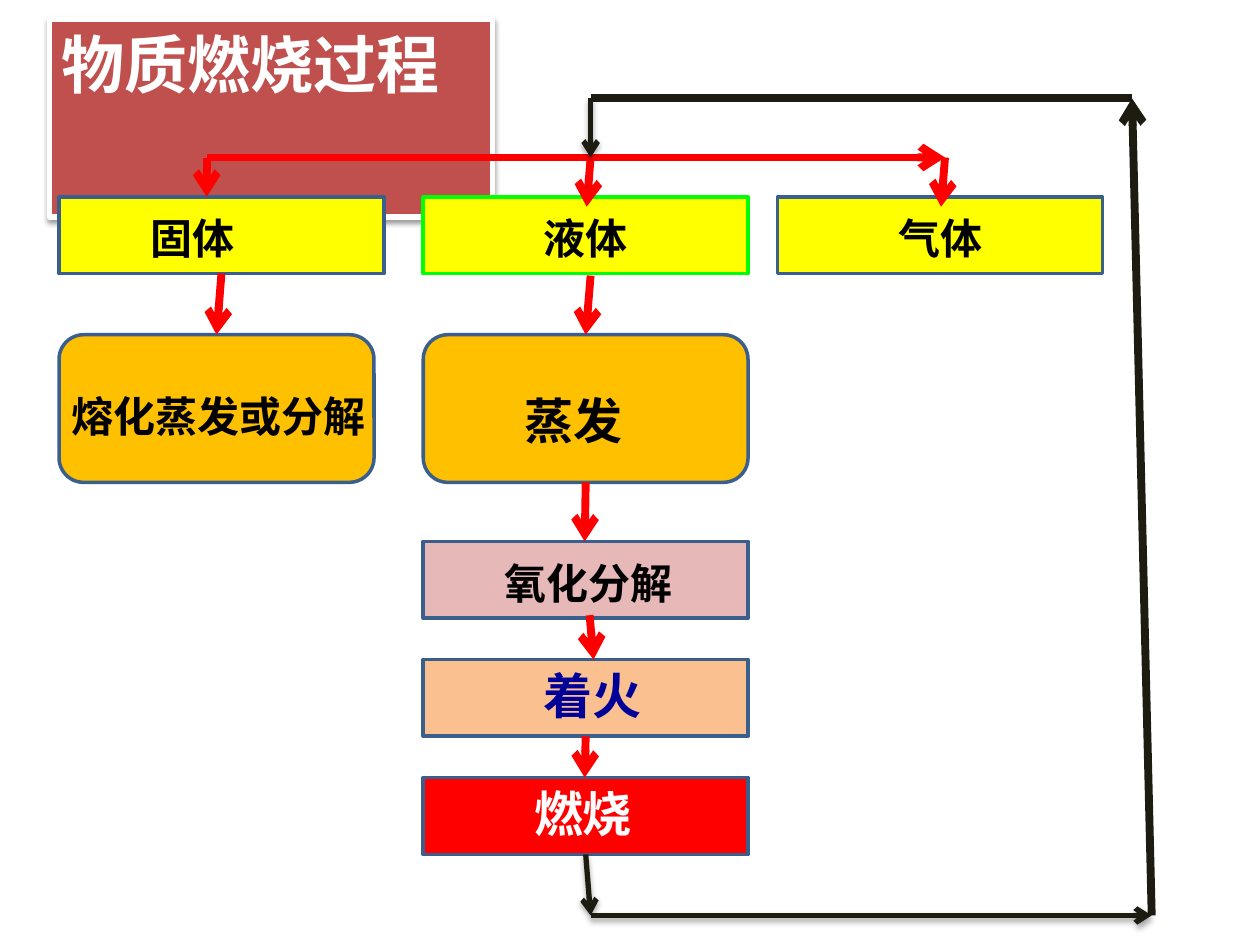
import pptx
import pptx.dml.color
import pptx.enum.shapes
import pptx.enum.text
import pptx.oxml
import pptx.oxml.ns
import pptx.util

HUES = {
    "red": "FF0000", "dark": "1E1C11", "edge": "3A5F8C", "green": "00FF00",
    "yellow": "FFFF00", "amber": "FFC000", "pink": "E6B9B8", "peach": "FAC090",
    "brick": "C0504D", "navy": "000099", "white": "FFFFFF", "black": "000000",
}
FRAME = {
    "auto_size": pptx.enum.text.MSO_AUTO_SIZE.SHAPE_TO_FIT_TEXT,
    "vertical_anchor": pptx.enum.text.MSO_ANCHOR.TOP,
}
CJK = "Noto Sans CJK SC"
NS = pptx.oxml.ns.nsdecls("a")
KIND = pptx.enum.shapes.MSO_SHAPE


def tint(name):
    return pptx.dml.color.RGBColor.from_string(HUES[name])


def assign(item, form):
    for key, val in form.items():
        setattr(item, key, val)


class Chart:
    """Draws flow chart parts on a slide ruled into 128 columns and 96 rows."""

    def __init__(self, deck):
        self.cell = deck.slide_width / 128
        self.slide = deck.slides.add_slide(deck.slide_layouts[5])

    def span(self, *cells):
        return [round(n * self.cell) for n in cells]

    def paint(self, shape, fill, edge, width):
        shape.fill.solid()
        shape.fill.fore_color.rgb = tint(fill)
        shape.line.color.rgb = tint(edge)
        shape.line.width = pptx.util.Pt(width)

    def shade(self, item, alpha=0):
        glow = (
            '<a:outerShdw blurRad="40000" dist="22000" dir="5400000" rotWithShape="0">'
            f'<a:srgbClr val="000000"><a:alpha val="{alpha * 1000}"/></a:srgbClr>'
            "</a:outerShdw>" if alpha else ""
        )
        xml = f"<a:effectLst {NS}>{glow}</a:effectLst>"
        item._element.spPr.append(pptx.oxml.parse_xml(xml))

    def words(self, frame, text, size, hue, face, wrap):
        assign(frame, {**FRAME, "word_wrap": wrap})
        para = frame.paragraphs[0]
        para.alignment = pptx.enum.text.PP_ALIGN.LEFT
        run = para.add_run()
        run.text = text
        assign(run.font, {"size": pptx.util.Pt(size), "bold": True, "name": face})
        run.font.color.rgb = tint(hue)
        east = pptx.oxml.parse_xml(f'<a:ea {NS} typeface="{CJK}"/>')
        run.font._element.append(east)

    def title(self, text, *area):
        head = self.slide.shapes.title
        assign(head, dict(zip(("left", "top", "width", "height"), self.span(*area))))
        self.paint(head, "brick", "white", 3)
        self.shade(head, 38)
        self.words(head.text_frame, text, 36, "white", "Calibri", True)

    def box(self, col, row, fill, edge="edge", wide=33, high=7.8, kind=KIND.RECTANGLE):
        area = self.span(col, row, wide, high)
        shape = self.slide.shapes.add_shape(kind, *area)
        shape.shadow.inherit = False
        self.paint(shape, fill, edge, 2)

    def label(self, text, col, row, size=24, hue="black", face="Calibri"):
        wide = pptx.util.Inches(len(text) * size / 72 + 0.2)
        high = pptx.util.Inches(size / 60 + 0.1)
        box = self.slide.shapes.add_textbox(*self.span(col, row), wide, high)
        self.words(box.text_frame, text, size, hue, face, False)

    def line(self, start, end, hue="red", width=4.5, head=True, alpha=0):
        link = self.slide.shapes.add_connector(
            pptx.enum.shapes.MSO_CONNECTOR.STRAIGHT, *self.span(*start, *end))
        link.line.color.rgb = tint(hue)
        link.line.width = pptx.util.Pt(width)
        if head:
            tip = pptx.oxml.parse_xml(f'<a:tailEnd {NS} type="arrow"/>')
            link.line._get_or_add_ln().append(tip)
        self.shade(link, alpha)


def main():
    deck = pptx.Presentation()
    assign(deck, {"slide_width": pptx.util.Inches(10),
                  "slide_height": pptx.util.Inches(7.5)})
    chart = Chart(deck)
    chart.title("物质燃烧过程", 5, 2, 45, 9.1)

    for col, edge in ((6, "edge"), (79, "edge"), (43, "green")):
        chart.box(col, 20, "yellow", edge)
    for row, fill in ((55, "pink"), (67, "peach"), (79, "red")):
        chart.box(43, row, fill)
    for col, wide in ((6, 32), (43, 33)):
        chart.box(col, 34, "amber", wide=wide, high=15, kind=KIND.ROUNDED_RECTANGLE)

    for text, col in (("气体", 90), ("液体", 54), ("固体", 14)):
        chart.label(text, col, 21, face=CJK)
    chart.label("熔化蒸发或分解", 6, 39)
    chart.label("蒸发", 52, 39, 28)
    chart.label("氧化分解", 50, 56)
    chart.label("着火", 54, 67, 28, "navy")
    chart.label("燃烧", 53, 79, 28, "white", "Arial")

    for start, end in (
        ((21, 16), (96, 16)), ((96, 16), (95.6, 21)), ((21, 16), (21, 20)),
        ((60, 16), (59.6, 21)), ((60, 28), (59.5, 34)), ((22.5, 27.8), (22, 34)),
        ((59.5, 49), (59.4, 55)), ((59.9, 62.5), (60.3, 67)),
        ((59.5, 74.8), (59.4, 79)),
    ):
        chart.line(start, end)

    chart.line((60, 10), (115, 10), "dark", head=False)
    chart.line((117, 93), (115, 10), "dark")
    for start, end in (((60, 10), (60, 16)), ((60, 93), (117, 93)),
                       ((59.5, 86.8), (60, 93))):
        chart.line(start, end, "dark", 3, alpha=35)
    deck.save("out.pptx")


if __name__ == "__main__":
    main()
